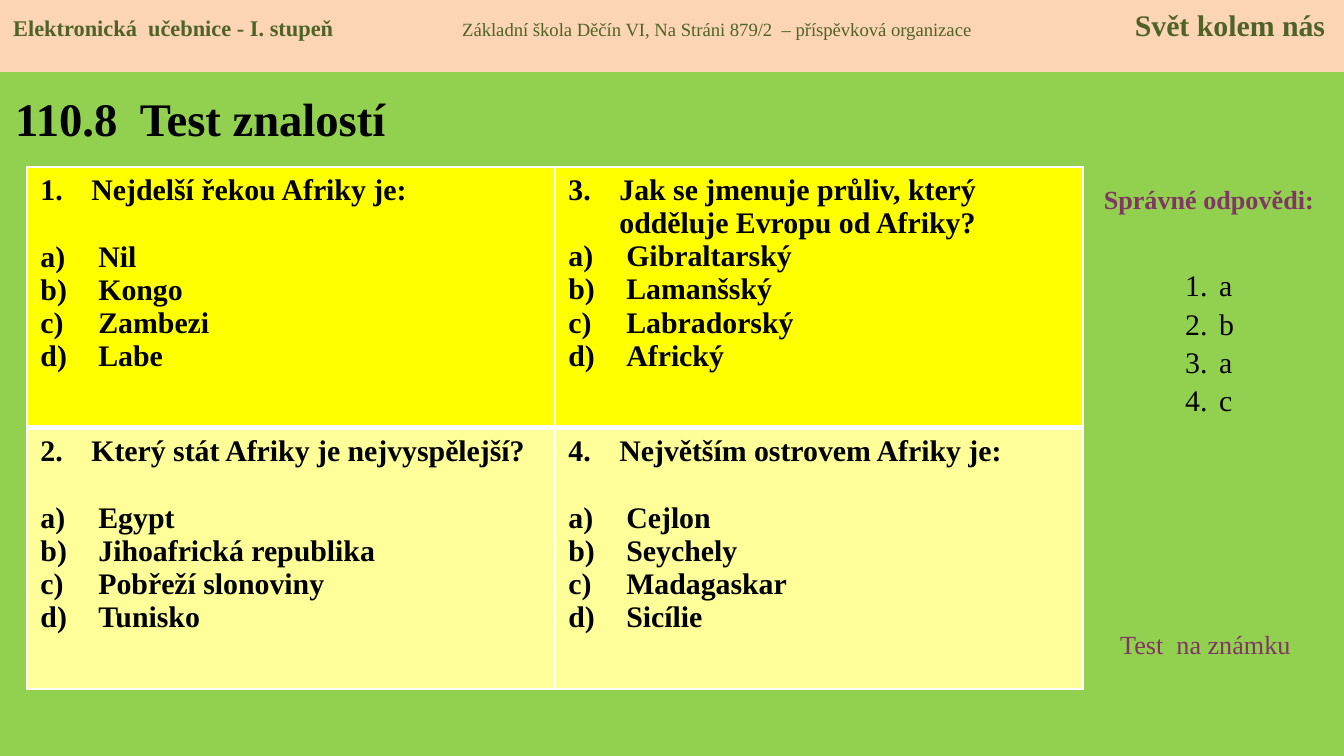
from lxml import etree
from pptx import Presentation
from pptx.dml.color import RGBColor
from pptx.enum.shapes import MSO_SHAPE
from pptx.enum.text import MSO_ANCHOR, PP_ALIGN
from pptx.oxml.ns import qn
from pptx.util import Emu, Pt

EMU_PER_PX = 914400 / 134.4
FONT = "Times New Roman"
RECTANGLE = MSO_SHAPE.RECTANGLE
TOP, MIDDLE = MSO_ANCHOR.TOP, MSO_ANCHOR.MIDDLE
LEFT, CENTER = PP_ALIGN.LEFT, PP_ALIGN.CENTER

BLACK = RGBColor(0x00, 0x00, 0x00)
GREEN = RGBColor(0x92, 0xD0, 0x50)
DARK_GREEN = RGBColor(0x4F, 0x62, 0x28)
PEACH = RGBColor(0xFC, 0xD5, 0xB5)
PURPLE = RGBColor(0x81, 0x37, 0x63)
YELLOW = RGBColor(0xFF, 0xFF, 0x00)
PALE_YELLOW = RGBColor(0xFF, 0xFF, 0x99)

# Content: header parts are text, size, bold
HEADER = [
    ("Elektronická  učebnice - I. stupeň", 12, True),
    ("\tZákladní škola Děčín VI, Na Stráni 879/2  – příspěvková organizace", 10, False),
    ("\tSvět kolem nás", 16, True),
]
HEADER_TABS = [(449, "l"), (1312, "r")]
# Each question: text, answers, points of space before the answers
QUESTIONS = [
    ("Nejdelší řekou Afriky je:", ["Nil", "Kongo", "Zambezi", "Labe"], 18),
    ("Který stát Afriky je nejvyspělejší?",
     ["Egypt", "Jihoafrická republika", "Pobřeží slonoviny", "Tunisko"], 18),
    ("Jak se jmenuje průliv, který odděluje Evropu od Afriky?",
     ["Gibraltarský", "Lamanšský", "Labradorský", "Africký"], 0),
    ("Největším ostrovem Afriky je:",
     ["Cejlon", "Seychely", "Madagaskar", "Sicílie"], 18),
]
CORRECT = ["a", "b", "a", "c"]
# Text, box, size, colour, bold, alignment, anchor
LABELS = [
    ("110.8  Test znalostí", (2, 74, 429, 87), 25, BLACK, True, LEFT, MIDDLE),
    ("Správné odpovědi:", (1082, 177, 254, 46), 14, PURPLE, True, CENTER, TOP),
    ("Test  na známku", (1107, 622, 211, 46), 14, PURPLE, False, LEFT, TOP),
]
TABLE_BOX = (27, 167, 1056, 522)
ROW_FILLS = [YELLOW, PALE_YELLOW]


def px(length):
    return Emu(round(length * EMU_PER_PX))


def box(values):
    return [px(value) for value in values]


def format_runs(paragraph, size, color, bold):
    for run in paragraph.runs:
        run.font.name = FONT
        run.font.size = Pt(size)
        run.font.bold = bold
        run.font.color.rgb = color


def add_text_box(slide, position):
    text_frame = slide.shapes.add_textbox(*box(position)).text_frame
    text_frame.word_wrap = True
    return text_frame


def set_number(paragraph, kind, indent, start=1):
    properties = paragraph._p.get_or_add_pPr()
    properties.set("marL", str(px(indent)))
    properties.set("indent", str(-px(indent)))
    number = etree.SubElement(properties, qn("a:buAutoNum"), type=kind)
    if start > 1:
        number.set("startAt", str(start))


def add_items(text_frame, items, bold):
    """Fill a frame with (text, kind, indent, start, space before) items."""
    text_frame.text = "\n".join(item[0] for item in items)
    for paragraph, (_, kind, indent, start, space) in zip(text_frame.paragraphs, items):
        set_number(paragraph, kind, indent, start)
        if space:
            paragraph.space_before = Pt(space)
        format_runs(paragraph, 16, BLACK, bold)


def set_borders(cell, widths):
    properties = cell._tc.get_or_add_tcPr()
    for side, width in widths.items():
        line = etree.SubElement(properties, qn("a:ln" + side), w=str(Pt(width)))
        fill = etree.SubElement(line, qn("a:solidFill"))
        etree.SubElement(fill, qn("a:srgbClr"), val="FFFFFF")


presentation = Presentation()
presentation.slide_width, presentation.slide_height = px(1344), px(756)
slide = presentation.slides.add_slide(presentation.slide_layouts[6])
slide.background.fill.solid()
slide.background.fill.fore_color.rgb = GREEN

# Title and side labels
for text, position, size, color, bold, alignment, anchor in LABELS:
    text_frame = add_text_box(slide, position)
    text_frame.vertical_anchor = anchor
    text_frame.text = text
    paragraph = text_frame.paragraphs[0]
    paragraph.alignment = alignment
    format_runs(paragraph, size, color, bold)

# Question table, filled column by column
table = slide.shapes.add_table(2, 2, *box(TABLE_BOX)).table
table.first_row = table.horz_banding = False
for index, (question, answers, gap) in enumerate(QUESTIONS):
    column, row = divmod(index, 2)
    cell = table.cell(row, column)
    items = [(question, "arabicPeriod", 51, index + 1, 0)]
    items += [(answer, "alphaLcParenR", 58, 1, 0 if position else gap)
              for position, answer in enumerate(answers)]
    add_items(cell.text_frame, items, True)
    set_borders(cell, {"L": 1, "R": 1, "T": 3 if row else 1, "B": 1 if row else 3})
    cell.fill.solid()
    cell.fill.fore_color.rgb = ROW_FILLS[row]

# Correct answers
text_frame = add_text_box(slide, (1172, 222, 74, 267))
text_frame.margin_top = px(45)
add_items(text_frame, [(answer, "arabicPeriod", 34, 1, 1.3 if position else 0)
                       for position, answer in enumerate(CORRECT)], False)

# Header band with tab stops
header = slide.shapes.add_shape(RECTANGLE, *box((0, 0, 1344, 72)))
header.shadow.inherit = False
header.fill.solid()
header.fill.fore_color.rgb = PEACH
header.line.fill.background()
header.text_frame.vertical_anchor = TOP
paragraph = header.text_frame.paragraphs[0]
paragraph.alignment = LEFT
tabs = etree.SubElement(paragraph._p.get_or_add_pPr(), qn("a:tabLst"))
for position, alignment in HEADER_TABS:
    etree.SubElement(tabs, qn("a:tab"), pos=str(px(position)), algn=alignment)
for text, size, bold in HEADER:
    run = paragraph.add_run()
    run.text = text
    run.font.name = FONT
    run.font.size = Pt(size)
    run.font.bold = bold
    run.font.color.rgb = DARK_GREEN

presentation.save("out.pptx")
